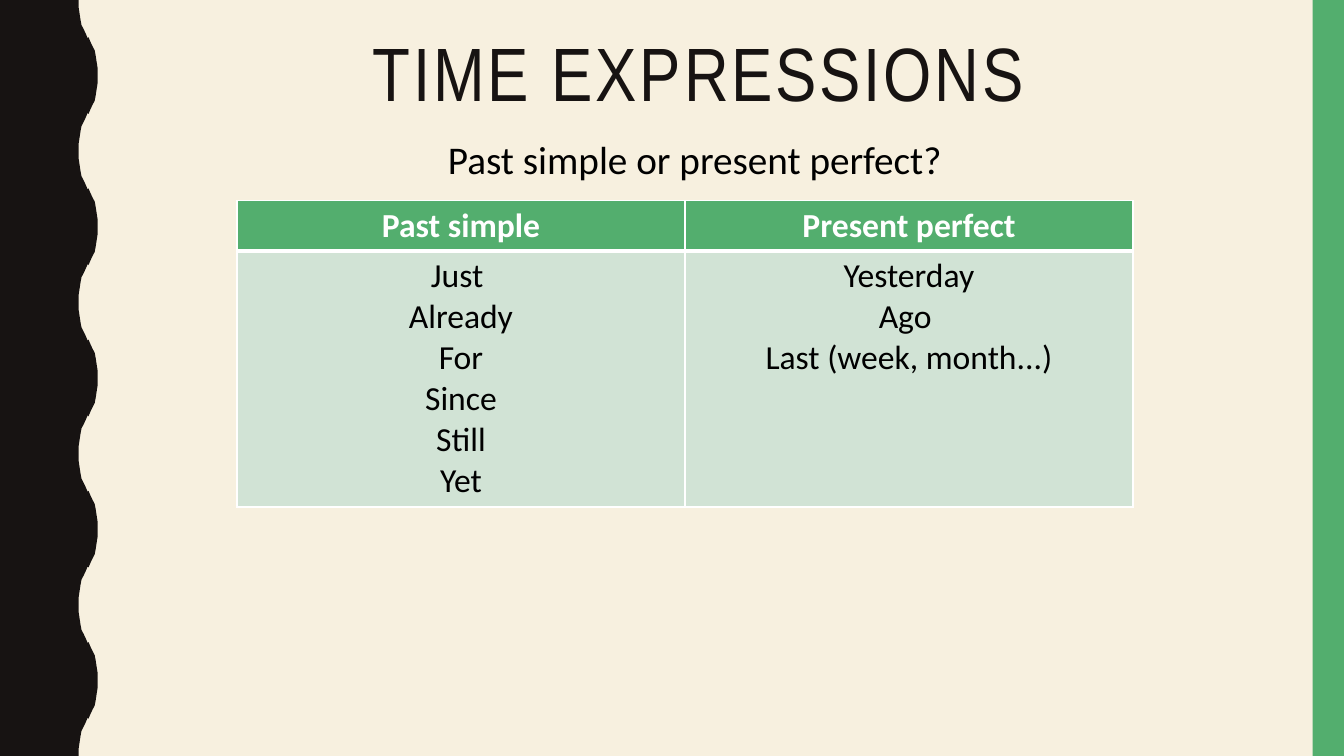
from lxml import etree
from pptx import Presentation, util as u
from pptx.dml.color import RGBColor
from pptx.enum import shapes, text
from pptx.oxml import ns

INK = RGBColor(0x17, 0x13, 0x12)
BLACK = RGBColor(0, 0, 0)
WHITE = RGBColor(255, 255, 255)
CREAM = RGBColor(0xF7, 0xF0, 0xDF)
GREEN = RGBColor(0x53, 0xAE, 0x6E)
MINT = RGBColor(0xD1, 0xE3, 0xD5)

# Fonts by role
HEAD = {"name": "Arial Narrow", "size": u.Pt(54)}
LEAD = {"name": "Calibri", "size": u.Pt(28)}
CELL = {"name": "Calibri", "size": u.Pt(24)}

# First half of one bend: x and y steps in percent of the slide
BEND = [(0, 0), (0, 0.93), (0.08, 1.87), (0.15, 2.67), (0.22, 3.33),
        (0.38, 3.87), (0.52, 4.4), (0.68, 5.07)]
LEFT, DEPTH, RISE, WAVES = 5.85, 1.42, 10, 5


class Deck:
    """Places elements by percent of the slide's width and height."""

    def __init__(self):
        self.prs = Presentation()
        self.prs.slide_width = u.Inches(13.333)
        self.prs.slide_height = u.Inches(7.5)
        self.page = self.prs.slides.add_slide(self.prs.slide_layouts[6])
        self.page.background.fill.solid()
        self.page.background.fill.fore_color.rgb = CREAM

    def x(self, share):
        return round(self.prs.slide_width * share / 100)

    def y(self, share):
        return round(self.prs.slide_height * share / 100)

    def box(self, left, top, wide, high):
        return self.x(left), self.y(top), self.x(wide), self.y(high)

    def paint(self, shape, color):
        shape.shadow.inherit = False
        shape.fill.solid()
        shape.fill.fore_color.rgb = color
        shape.line.fill.background()

    def bar(self, place, color):
        kind = shapes.MSO_SHAPE.RECTANGLE
        self.paint(self.page.shapes.add_shape(kind, *self.box(*place)), color)

    def wave(self, color):
        # Each bend is its first half plus that half turned about its middle
        half = BEND + [(DEPTH - dx, RISE - dy) for dx, dy in BEND[::-1]]
        edge = []
        for i in range(WAVES):
            top = 2 * RISE * i
            edge += [(LEFT + dx, top + dy) for dx, dy in half]
            edge += [(LEFT + dx, top + 2 * RISE - dy) for dx, dy in half[::-1]]
        pen = self.page.shapes.build_freeform(0, 0)
        pen.add_line_segments([(self.x(a), self.y(b)) for a, b in edge + [(0, 100)]])
        self.paint(pen.convert_to_shape(), color)

    def words(self, para, line, style, color, **more):
        para.alignment = text.PP_ALIGN.CENTER
        run = para.add_run()
        run.text = line
        for key, val in {**style, **more}.items():
            setattr(run.font, key, val)
        run.font.color.rgb = color
        return run

    def text(self, place, line, style, color, anchor, lines, before=0, track=0):
        frame = self.page.shapes.add_textbox(*self.box(*place)).text_frame
        frame.word_wrap = True
        frame.vertical_anchor = anchor
        para = frame.paragraphs[0]
        para.line_spacing = lines
        para.space_before = u.Pt(before)
        run = self.words(para, line, style, color)
        if track:
            run._r.get_or_add_rPr().set("spc", str(track * 100))

    def rim(self, cell, **wide):
        props = cell._tc.get_or_add_tcPr()
        for i, side in enumerate("LRTB"):
            line = etree.Element(ns.qn(f"a:ln{side}"),
                                 w=str(int(u.Pt(wide.get(side, 1)))))
            fill = etree.SubElement(line, ns.qn("a:solidFill"))
            etree.SubElement(fill, ns.qn("a:srgbClr"), val=str(WHITE))
            props.insert(i, line)

    def table(self, left, top, wide, highs, rows):
        place = self.box(left, top, wide, sum(highs))
        grid = self.page.shapes.add_table(len(rows), len(rows[0]), *place).table
        for r, row in enumerate(rows):
            grid.rows[r].height = self.y(highs[r])
            first = r == 0
            for c, items in enumerate(row):
                cell = grid.cell(r, c)
                cell.fill.solid()
                cell.fill.fore_color.rgb = GREEN if first else MINT
                self.rim(cell, **({"B": 3} if first else {"T": 3}))
                frame = cell.text_frame
                for i, item in enumerate(items):
                    para = frame.add_paragraph() if i else frame.paragraphs[0]
                    self.words(para, item, CELL, WHITE if first else BLACK,
                               bold=first)


def main():
    deck = Deck()

    # Side decoration
    deck.wave(INK)
    deck.bar((97.67, 0, 2.33, 100), GREEN)

    # Title and question
    deck.text((6.23, 3.87, 93, 12.67), "TIME EXPRESSIONS ", HEAD, INK,
              text.MSO_ANCHOR.MIDDLE, 0.9, track=2)
    deck.text((10.28, 16.67, 83.48, 76.27), "Past simple or present perfect? ",
              LEAD, BLACK, text.MSO_ANCHOR.TOP, 1.1, before=7)

    # Word lists
    deck.table(17.63, 26.53, 66.67, (6.67, 33.87), [
        [["Past simple"], ["Present perfect"]],
        [["Just ", "Already", "For", "Since", "Still", "Yet"],
         ["Yesterday", "Ago ", "Last (week, month...)"]],
    ])
    deck.prs.save("out.pptx")


if __name__ == "__main__":
    main()
